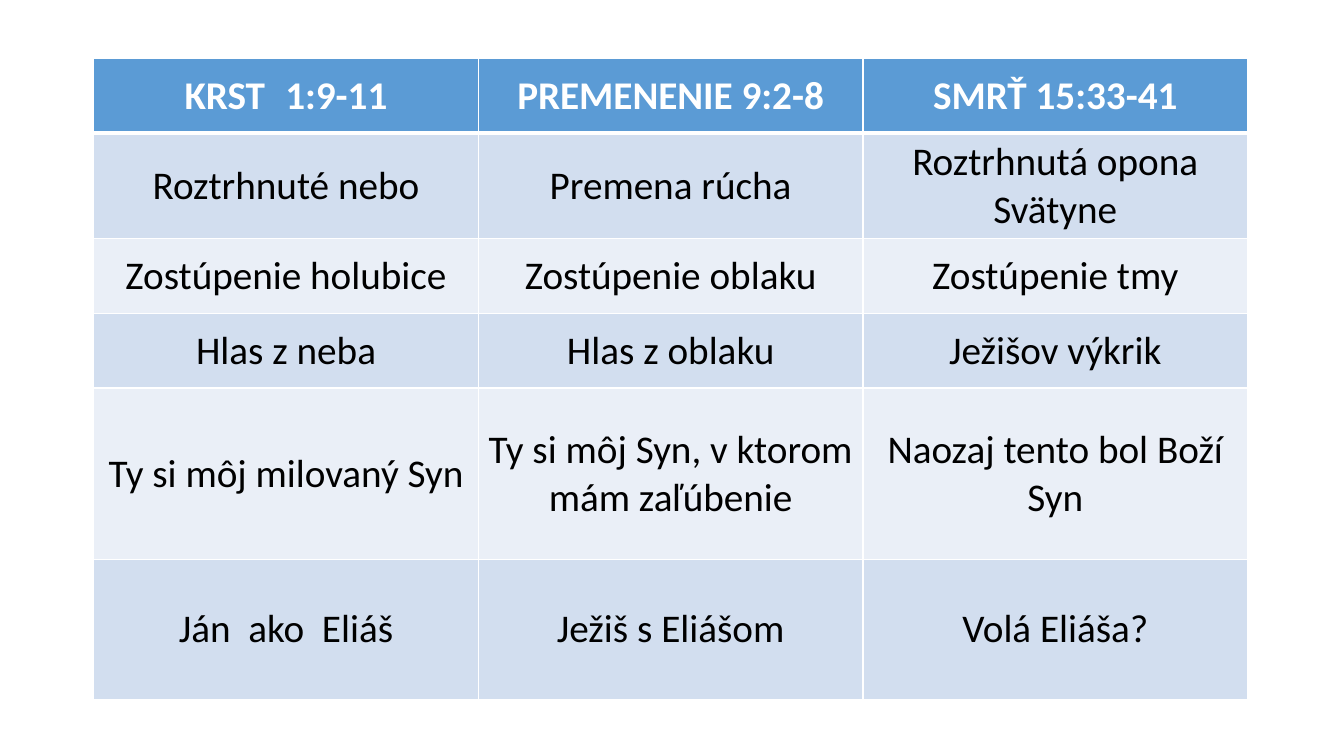
from lxml.etree import SubElement
from pptx import Presentation
from pptx.dml.color import RGBColor
from pptx.enum.text import MSO_ANCHOR, PP_ALIGN
from pptx.oxml.ns import qn
from pptx.util import Cm, Pt

WHITE, BLACK = "FFFFFF", "000000"
HEADER_FILL = "5B9BD5"
BAND_FILLS = ["EAEFF7", "D2DEEF"]
ROW_HEIGHTS = [1.88, 2.39, 1.88, 1.88, 4.32, 3.53]
COMPARISON = [
    ["KRST	1:9-11", "PREMENENIE 9:2-8", "SMRŤ 15:33-41"],
    ["Roztrhnuté nebo", "Premena rúcha", "Roztrhnutá opona Svätyne"],
    ["Zostúpenie holubice", "Zostúpenie oblaku", "Zostúpenie tmy"],
    ["Hlas z neba", "Hlas z oblaku", "Ježišov výkrik"],
    ["Ty si môj milovaný Syn", "Ty si môj Syn, v ktorom mám zaľúbenie",
     "Naozaj tento bol Boží Syn"],
    ["Ján  ako  Eliáš", "Ježiš s Eliášom", "Volá Eliáša?"],
]


def color(value):
    return RGBColor.from_string(value)


def add_borders(cell, bottom_width):
    properties = cell._tc.get_or_add_tcPr()
    widths = {"a:lnL": 1, "a:lnR": 1, "a:lnT": 1, "a:lnB": bottom_width}
    for side, width in widths.items():
        line = SubElement(properties, qn(side), w=str(Pt(width)))
        fill = SubElement(line, qn("a:solidFill"))
        SubElement(fill, qn("a:srgbClr"), val=WHITE)


def fill_cell(cell, text, is_header, fill):
    add_borders(cell, 3 if is_header else 1)
    cell.fill.solid()
    cell.fill.fore_color.rgb = color(fill)
    cell.vertical_anchor = MSO_ANCHOR.MIDDLE
    para = cell.text_frame.paragraphs[0]
    para.text = text
    para.alignment = PP_ALIGN.CENTER
    font = para.runs[0].font
    font.name = "Calibri"
    font.size = Pt(28)
    font.bold = is_header
    font.color.rgb = color(WHITE if is_header else BLACK)


def add_comparison(page, left, top, width):
    columns = len(COMPARISON[0])
    table = page.shapes.add_table(len(COMPARISON), columns, Cm(left), Cm(top),
                                  Cm(width), Cm(sum(ROW_HEIGHTS))).table
    for column in table.columns:
        column.width = Cm(width / columns)
    for row_index, texts in enumerate(COMPARISON):
        table.rows[row_index].height = Cm(ROW_HEIGHTS[row_index])
        is_header = row_index == 0
        fill = HEADER_FILL if is_header else BAND_FILLS[row_index % 2]
        for column_index, text in enumerate(texts):
            fill_cell(table.cell(row_index, column_index), text, is_header, fill)


def main():
    deck = Presentation()
    deck.slide_width, deck.slide_height = Cm(33.87), Cm(19.05)
    page = deck.slides.add_slide(deck.slide_layouts[6])
    add_comparison(page, 2.36, 1.47, 29.08)
    deck.save("out.pptx")


if __name__ == "__main__":
    main()
